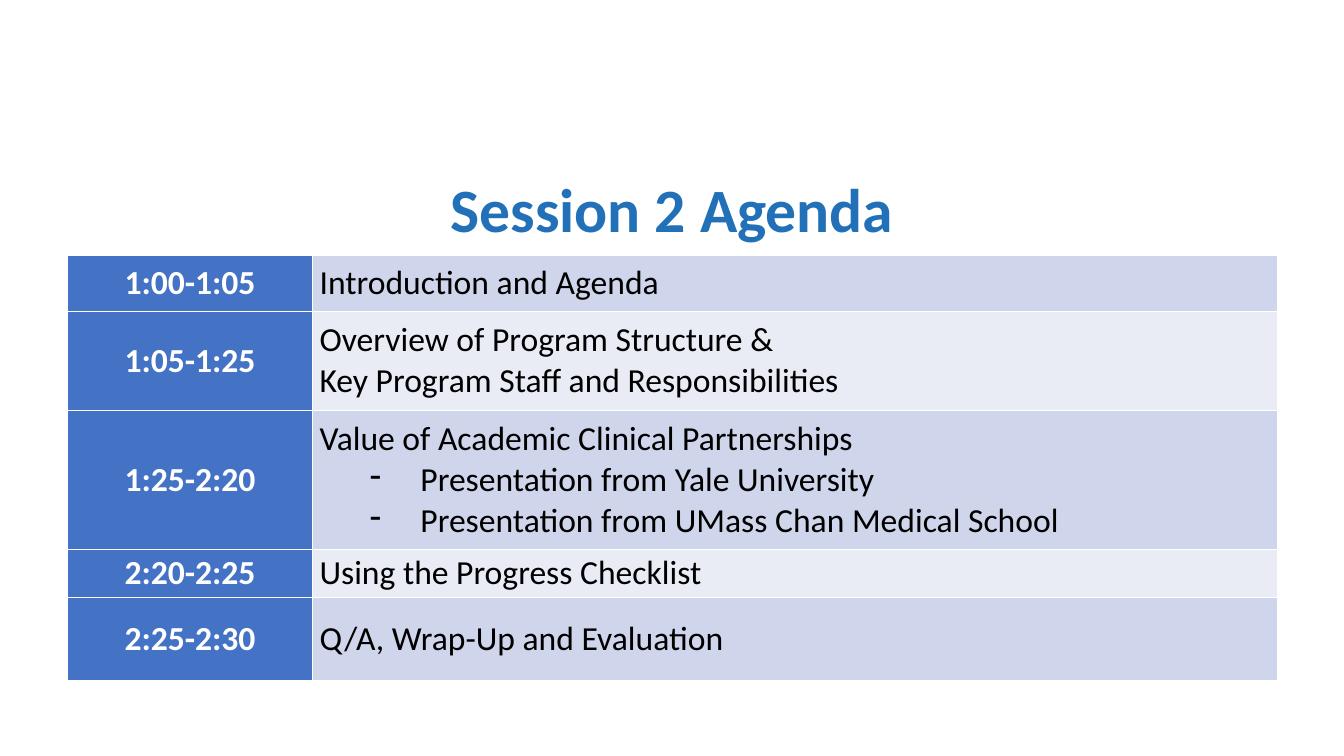
from lxml import etree
from pptx import Presentation
from pptx.dml.color import RGBColor
from pptx.enum.text import MSO_ANCHOR, PP_ALIGN
from pptx.oxml.ns import qn
from pptx.util import Inches, Pt

LEFT, CENTER = PP_ALIGN.LEFT, PP_ALIGN.CENTER
MIDDLE = MSO_ANCHOR.MIDDLE
BLUE, BANDS = "4472C4", ("CFD5EA", "E9EBF5")
DASH = "- "

AGENDA = [
    ("1:00-1:05", 0.56, ["Introduction and Agenda"]),
    ("1:05-1:25", 0.98, ["Overview of Program Structure &",
                         "Key Program Staff and Responsibilities"]),
    ("1:25-2:20", 1.38, ["Value of Academic Clinical Partnerships",
                         DASH + "Presentation from Yale University",
                         DASH + "Presentation from UMass Chan Medical School"]),
    ("2:20-2:25", 0.48, ["Using the Progress Checklist"]),
    ("2:25-2:30", 0.82, ["Q/A, Wrap-Up and Evaluation"]),
]


def write(tf, lines, size=24, color="000000", bold=False, align=LEFT, spacing=1.0):
    """Fill a text frame, turning lines that start with a dash into bullets."""
    tf.word_wrap = True
    for i, line in enumerate(lines):
        p = tf.paragraphs[0] if i == 0 else tf.add_paragraph()
        p.alignment, p.line_spacing = align, spacing
        if line.startswith(DASH):
            p.level = 1
            pPr = p._p.get_or_add_pPr()
            pPr.set("marL", str(Inches(1)))
            pPr.set("indent", str(Inches(-0.5)))
            etree.SubElement(pPr, qn("a:buFontTx"))
            etree.SubElement(pPr, qn("a:buChar"), char="-")
        r = p.add_run()
        r.text = line.removeprefix(DASH)
        r.font.name, r.font.size, r.font.bold = "Calibri", Pt(size), bold
        r.font.color.rgb = RGBColor.from_string(color)


def style_cell(cell, fill):
    """Set the fill, margins, anchor and white borders of a cell."""
    cell.fill.solid()
    cell.fill.fore_color.rgb = RGBColor.from_string(fill)
    cell.vertical_anchor = MIDDLE
    cell.margin_left = cell.margin_right = Inches(0.07)
    cell.margin_top = cell.margin_bottom = 0
    tcPr = cell._tc.get_or_add_tcPr()
    for i, side in enumerate(("a:lnL", "a:lnR", "a:lnT", "a:lnB")):
        ln = etree.Element(qn(side), w=str(Pt(1)))
        line_fill = etree.SubElement(ln, qn("a:solidFill"))
        etree.SubElement(line_fill, qn("a:srgbClr"), val="FFFFFF")
        tcPr.insert(i, ln)


prs = Presentation()
prs.slide_width, prs.slide_height = Inches(13.33), Inches(7.5)
s = prs.slides.add_slide(prs.slide_layouts[6])

title = s.shapes.add_textbox(Inches(0.92), Inches(1.69), Inches(11.5), Inches(0.83))
title.text_frame.vertical_anchor = MIDDLE
write(title.text_frame, ["Session 2 Agenda"], size=44, color="2270B7",
      bold=True, align=CENTER, spacing=0.9)

table = s.shapes.add_table(len(AGENDA), 2, Inches(0.67), Inches(2.53),
                           Inches(12), Inches(4.22)).table
table.first_row = False
table.columns[0].width = Inches(2.43)
table.columns[1].width = Inches(9.57)

for i, (time, height, topics) in enumerate(AGENDA):
    table.rows[i].height = Inches(height)
    time_cell, topic_cell = table.cell(i, 0), table.cell(i, 1)
    style_cell(time_cell, BLUE)
    write(time_cell.text_frame, [time], color="FFFFFF", bold=True, align=CENTER)
    style_cell(topic_cell, BANDS[i % 2])
    write(topic_cell.text_frame, topics)

prs.save("out.pptx")
